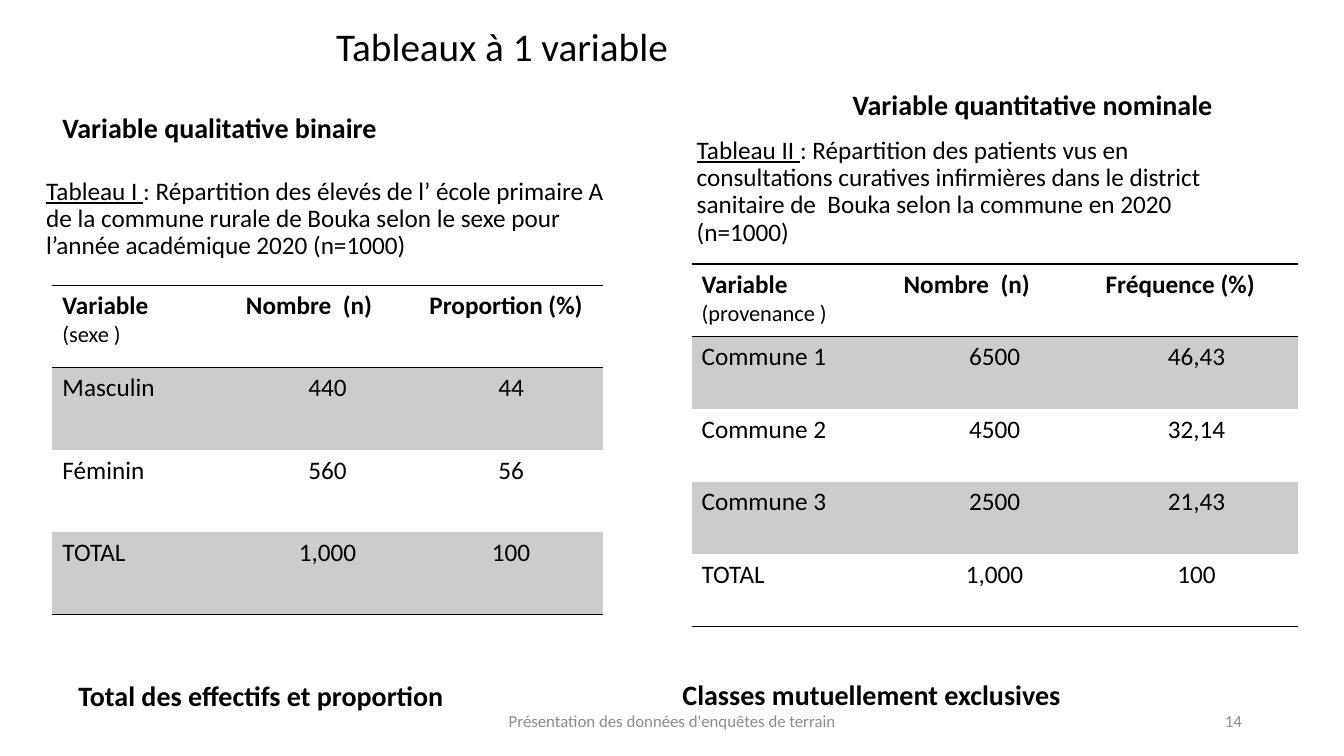
import pptx
import pptx.util
import pptx.dml.color
import pptx.enum.text
import pptx.oxml
import pptx.oxml.ns

HUES = {"ink": "000000", "band": "CCCCCC", "foot": "8C8C8C"}
FONT = "Calibri"
WIDE, HIGH = 13.33, 7.5
PLAIN = "{2D5ABB26-0587-4C30-8999-92F81FD0307C}"

# Boxes are left, top, width, height in percent of the slide
# Texts: box, alignment, line spacing, runs of (text, style)
TEXTS = [
    ((10.5, 2.13, 53.7, 8.67), "c", 0.9, [(" Tableaux à 1 variable ", "title")]),
    ((3.9, 12.53, 33.4, 9.2), "l", 0.9, [("Variable qualitative binaire", "head")]),
    ((62.7, 9.87, 30.8, 8.4), "l", 0.9, [("Variable quantitative nominale", "head")]),
    ((2.7, 22.93, 43.4, 12.13), "l", 0.9, [
        ("Tableau I ", "label"),
        (": Répartition des élevés de l’ école primaire A de la commune rurale "
         "de Bouka selon le sexe pour l’année académique 2020 (n=1000)", "body")]),
    ((51.1, 19.33, 44, 12.13), "l", 0.9, [
        ("Tableau II ", "label"),
        (": Répartition des patients vus en consultations curatives infirmières dans "
         "le district sanitaire de  Bouka selon la commune en 2020 (n=1000)", "body")]),
    ((5.1, 87.75, 34.1, 9.07), "l", 0.9, [("Total des effectifs et proportion", "head")]),
    ((50.04, 87.6, 34.1, 9.07), "l", 0.9, [("Classes mutuellement exclusives", "head")]),
    ((33.15, 92.67, 33.75, 5.33), "c", 1, [
        ("Présentation des données d'enquêtes de terrain", "foot")]),
    ((70.65, 92.67, 22.5, 5.33), "r", 1, [("14", "foot")]),
]

# Tables: box, variable in the first heading, last heading, rows
TABLES = [
    ((3.9, 37.73, 40.96, 43.6), "(sexe )", "Proportion (%)", [
        ("Masculin", "440", "44"),
        ("Féminin", "560", "56"),
        ("TOTAL", "1,000", "100")]),
    ((51.46, 34.93, 45.09, 48), "(provenance )", "Fréquence (%)", [
        ("Commune 1", "6500", "46,43"),
        ("Commune 2", "4500", "32,14"),
        ("Commune 3", "2500", "21,43"),
        ("TOTAL", "1,000", "100")]),
]

# Styles: size, bold, underline, colour
STYLES = {
    "title": (28, False, False, "ink"),
    "head": (20, True, False, "ink"),
    "label": (18, False, True, "ink"),
    "body": (18, False, False, "ink"),
    "strong": (18, True, False, "ink"),
    "small": (16, False, False, "ink"),
    "foot": (12, False, False, "foot"),
}
ALIGN = {
    "l": pptx.enum.text.PP_ALIGN.LEFT,
    "c": pptx.enum.text.PP_ALIGN.CENTER,
    "r": pptx.enum.text.PP_ALIGN.RIGHT,
}


def place(box):
    sides = (WIDE, HIGH, WIDE, HIGH)
    return [pptx.util.Inches(part * side / 100) for part, side in zip(box, sides)]


def color(name):
    return pptx.dml.color.RGBColor.from_string(HUES[name])


def write(para, runs, align="l", space=1):
    para.alignment = ALIGN[align]
    para.line_spacing = space
    for text, style in runs:
        size, bold, under, hue = STYLES[style]
        run = para.add_run()
        run.text = text
        font = run.font
        font.name, font.size = FONT, pptx.util.Pt(size)
        font.bold, font.underline = bold, under
        font.color.rgb = color(hue)


def rule(cell, side):
    line = pptx.oxml.parse_xml(
        f'<a:{side} {pptx.oxml.ns.nsdecls("a")} w="12700"><a:solidFill>'
        f'<a:srgbClr val="{HUES["ink"]}"/></a:solidFill></a:{side}>')
    cell._tc.get_or_add_tcPr().append(line)


def add_text(slide, box, align, space, runs):
    frame = slide.shapes.add_textbox(*place(box)).text_frame
    frame.word_wrap = True
    frame.vertical_anchor = pptx.enum.text.MSO_ANCHOR.MIDDLE
    write(frame.paragraphs[0], runs, align, space)


def add_grid(slide, box, name, last, rows):
    grid = [("Variable", "Nombre  (n)", last)] + rows
    table = slide.shapes.add_table(len(grid), 3, *place(box)).table
    table.first_row = table.horz_banding = False
    table._tbl.tblPr.find(pptx.oxml.ns.qn("a:tableStyleId")).text = PLAIN
    for r, row in enumerate(grid):
        for c, text in enumerate(row):
            cell = table.cell(r, c)
            frame = cell.text_frame
            align = "c" if r and c else "l"
            write(frame.paragraphs[0], [(text, "body" if r else "strong")], align)
            if r == c == 0:
                write(frame.add_paragraph(), [(name, "small")])
            # Rules above and below the headings, and under the total
            if r == 0:
                rule(cell, "lnT")
            if r in (0, len(grid) - 1):
                rule(cell, "lnB")
            # Every other row is shaded
            if r % 2:
                cell.fill.solid()
                cell.fill.fore_color.rgb = color("band")
            else:
                cell.fill.background()


def main():
    deck = pptx.Presentation()
    deck.slide_width = pptx.util.Inches(WIDE)
    deck.slide_height = pptx.util.Inches(HIGH)
    slide = deck.slides.add_slide(deck.slide_layouts[6])
    for table in TABLES:
        add_grid(slide, *table)
    for text in TEXTS:
        add_text(slide, *text)
    deck.save("out.pptx")


if __name__ == "__main__":
    main()
